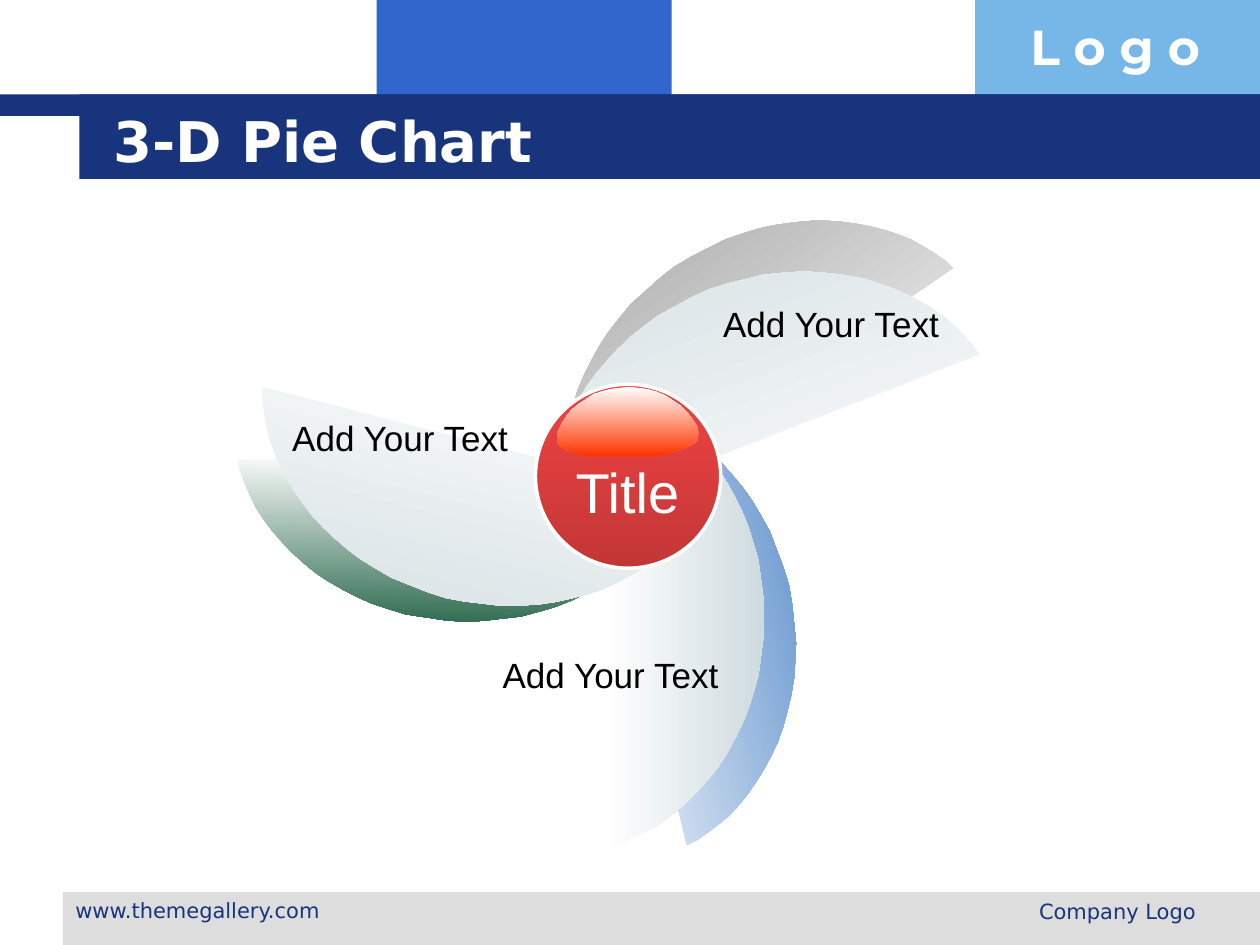
import pptx
import pptx.dml.color
import pptx.enum.shapes
import pptx.enum.text
import pptx.util

Inches = pptx.util.Inches
RGBColor = pptx.dml.color.RGBColor
SHAPE = pptx.enum.shapes.MSO_SHAPE
ALIGN = pptx.enum.text.PP_ALIGN
ANCHOR = pptx.enum.text.MSO_ANCHOR

WHITE = RGBColor(0xFF, 0xFF, 0xFF)
BLACK = RGBColor(0x00, 0x00, 0x00)
NAVY = RGBColor(0x17, 0x34, 0x7D)
BLUE = RGBColor(0x33, 0x66, 0xCC)
SKY = RGBColor(0x77, 0xB7, 0xE7)
LIGHT_GRAY = RGBColor(0xDD, 0xDD, 0xDD)
PETAL_BLUE = RGBColor(0x44, 0x7E, 0xC4)
PETAL_GREEN = RGBColor(0x2A, 0x68, 0x4C)
PETAL_GRAY = RGBColor(0x96, 0x96, 0x96)
PETAL_PALE = RGBColor(0xCF, 0xDB, 0xDF)
RED_TOP = RGBColor(0xF1, 0x43, 0x43)
RED_BOTTOM = RGBColor(0xC2, 0x36, 0x36)
GLOSS_ORANGE = RGBColor(0xFF, 0x33, 0x00)

HEADING_FONT = "DejaVu Sans"
LABEL_FONT = "Arial"

# Upper half of a petal's curved edge, from its tip to its widest point
PETAL_HEIGHT = 3.63
PETAL_EDGE = [
    (0, 0), (0.09, 0.02), (0.19, 0.06), (0.28, 0.1), (0.38, 0.15),
    (0.47, 0.21), (0.56, 0.28), (0.65, 0.36), (0.73, 0.44), (0.81, 0.53),
    (0.89, 0.63), (0.96, 0.74), (1.02, 0.85), (1.08, 0.97), (1.13, 1.09),
    (1.17, 1.22), (1.21, 1.36), (1.23, 1.51), (1.25, 1.66), (1.26, 1.81),
]
PETAL_OUTLINE = PETAL_EDGE + [(x, PETAL_HEIGHT - y) for x, y in reversed(PETAL_EDGE[:-1])]

# Left, top, rotation and outer colour, from back to front
PETALS = [
    (5.02, 2.98, 346.8, PETAL_BLUE),
    (3.06, 2.49, 91, PETAL_GREEN),
    (5.08, 0.82, 235.5, PETAL_GRAY),
    (4.81, 3.09, 0, PETAL_PALE),
    (3.06, 2.32, 104.3, PETAL_PALE),
    (5.22, 1.07, 248.7, PETAL_PALE),
]

# Highlight on the centre ball, relative to its own box
GLOSS_OUTLINE = [
    (1.11, 0.31), (1.13, 0.37), (1.11, 0.43), (1.06, 0.47), (0.98, 0.5),
    (0.88, 0.53), (0.76, 0.55), (0.68, 0.55), (0.4, 0.55), (0.29, 0.55),
    (0.2, 0.54), (0.12, 0.52), (0.05, 0.49), (0.01, 0.45), (0, 0.41),
    (0.01, 0.35), (0.04, 0.29), (0.08, 0.23), (0.12, 0.18), (0.17, 0.14),
    (0.23, 0.1), (0.29, 0.06), (0.35, 0.04), (0.42, 0.02), (0.49, 0.01),
    (0.57, 0), (0.65, 0.01), (0.72, 0.02), (0.79, 0.04), (0.86, 0.07),
    (0.92, 0.11), (0.98, 0.15), (1.03, 0.2), (1.07, 0.25),
]

LABELS = [
    (2.15, 3.26, ALIGN.RIGHT),
    (5.64, 2.35, ALIGN.LEFT),
    (3.82, 5.14, ALIGN.RIGHT),
]


def add_block(shapes, box, color):
    shape = shapes.add_shape(SHAPE.RECTANGLE, *map(Inches, box))
    shape.shadow.inherit = False
    shape.fill.solid()
    shape.fill.fore_color.rgb = color
    shape.line.fill.background()


def add_text(shapes, box, text, size, color, font=HEADING_FONT, bold=False,
             align=ALIGN.LEFT, anchor=ANCHOR.TOP, wrap=True):
    frame = shapes.add_textbox(*map(Inches, box)).text_frame
    frame.word_wrap = wrap
    frame.vertical_anchor = anchor
    paragraph = frame.paragraphs[0]
    paragraph.alignment = align
    run = paragraph.add_run()
    run.text = text
    run.font.name = font
    run.font.size = pptx.util.Pt(size)
    run.font.bold = bold
    run.font.color.rgb = color


def fill_gradient(shape, first, last, angle=0):
    """Angle is counter-clockwise in degrees."""
    shape.fill.gradient()
    shape.fill.gradient_angle = angle
    for stop, color in zip(shape.fill.gradient_stops, (first, last)):
        stop.color.rgb = color


def add_outline(shapes, left, top, outline):
    points = [(Inches(left + x), Inches(top + y)) for x, y in outline]
    builder = shapes.build_freeform(*points[0], scale=1.0)
    builder.add_line_segments(points[1:], close=True)
    shape = builder.convert_to_shape()
    shape.shadow.inherit = False
    shape.line.fill.background()
    return shape


def add_header(shapes, left, top, width):
    # Colour blocks above the title band
    add_block(shapes, (left + 2.99, top, 2.34, 0.92), BLUE)
    add_block(shapes, (left + 7.74, top, 2.26, 0.92), SKY)
    # Stepped title band
    add_block(shapes, (left, top + 0.75, width, 0.17), NAVY)
    add_block(shapes, (left + 0.63, top + 0.75, width - 0.63, 0.67), NAVY)
    add_text(shapes, (left + 8.08, top + 0.08, 1.93, 0.57), "L o g o", 28, WHITE,
             font="Montserrat", bold=True)
    add_text(shapes, (left + 0.8, top + 0.8, 8.53, 0.62), "3-D Pie Chart", 32, WHITE,
             bold=True, anchor=ANCHOR.MIDDLE)


def add_footer(shapes, left, top, width, height):
    add_block(shapes, (left, top, width, height), LIGHT_GRAY)
    add_text(shapes, (left, top - 0.01, 2.33, 0.35), "www.themegallery.com", 12, NAVY)
    add_text(shapes, (left + 5.92, top, 3.17, 0.35), "Company Logo", 12, NAVY,
             align=ALIGN.RIGHT)


def add_ball(shapes, left, top, width, height):
    ball = shapes.add_shape(SHAPE.OVAL, *map(Inches, (left, top, width, height)))
    ball.shadow.inherit = False
    fill_gradient(ball, RED_TOP, RED_BOTTOM, 270)
    ball.line.color.rgb = WHITE
    ball.line.width = pptx.util.Pt(2)
    gloss = add_outline(shapes, left + 0.17, top + 0.02, GLOSS_OUTLINE)
    fill_gradient(gloss, WHITE, GLOSS_ORANGE, 270)
    add_text(shapes, (left + 0.21, top + 0.53, 1.04, 0.63), "Title", 32, WHITE,
             font=LABEL_FONT, align=ALIGN.CENTER, wrap=False)


def add_pinwheel(shapes):
    for left, top, rotation, color in PETALS:
        petal = add_outline(shapes, left, top, PETAL_OUTLINE)
        petal.rotation = rotation
        fill_gradient(petal, WHITE, color)
    add_ball(shapes, 4.25, 3.05, 1.47, 1.46)
    for left, top, align in LABELS:
        add_text(shapes, (left, top, 1.98, 0.43), "Add Your Text", 20, BLACK,
                 font=LABEL_FONT, align=align, wrap=False)


def main():
    presentation = pptx.Presentation()
    presentation.slide_width = Inches(10)
    presentation.slide_height = Inches(7.5)
    slide = presentation.slides.add_slide(presentation.slide_layouts[6])
    add_header(slide.shapes, 0, 0, 10)
    add_footer(slide.shapes, 0.5, 7.08, 9.5, 0.42)
    add_pinwheel(slide.shapes.add_group_shape().shapes)
    presentation.save("out.pptx")


if __name__ == "__main__":
    main()
